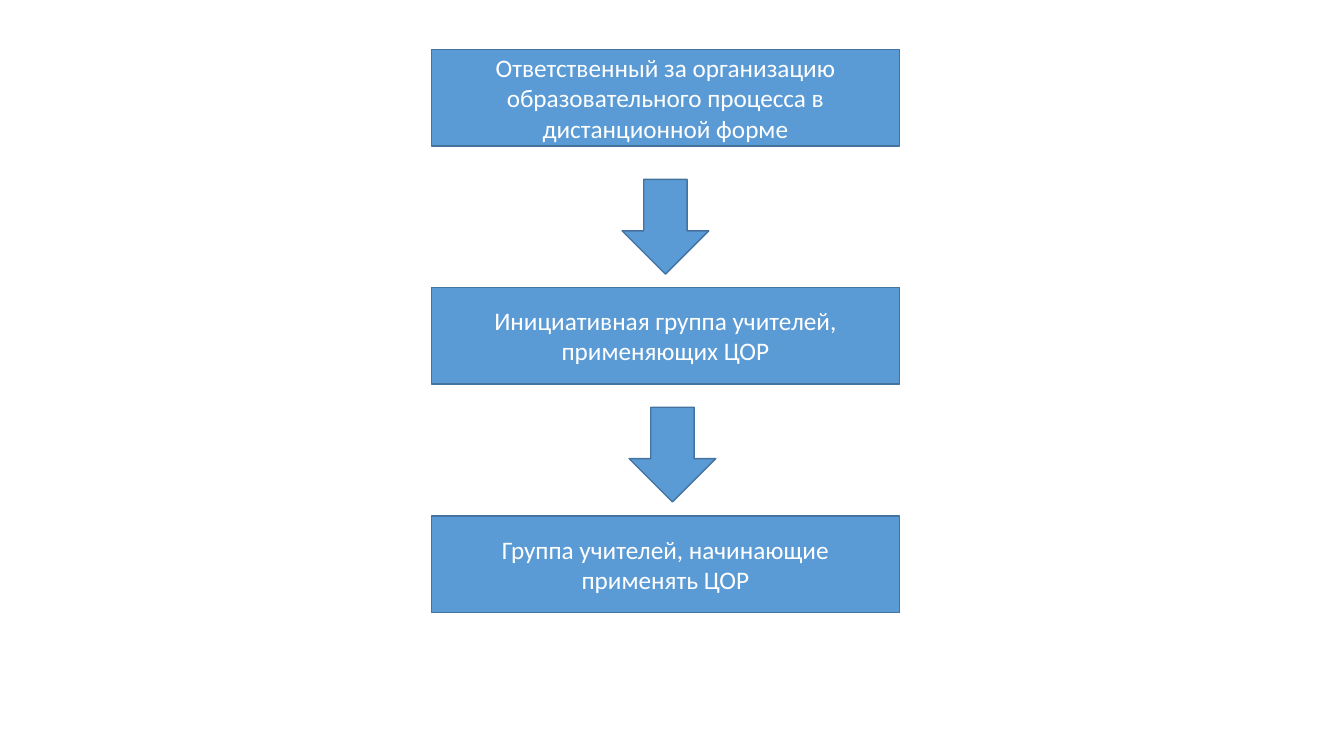
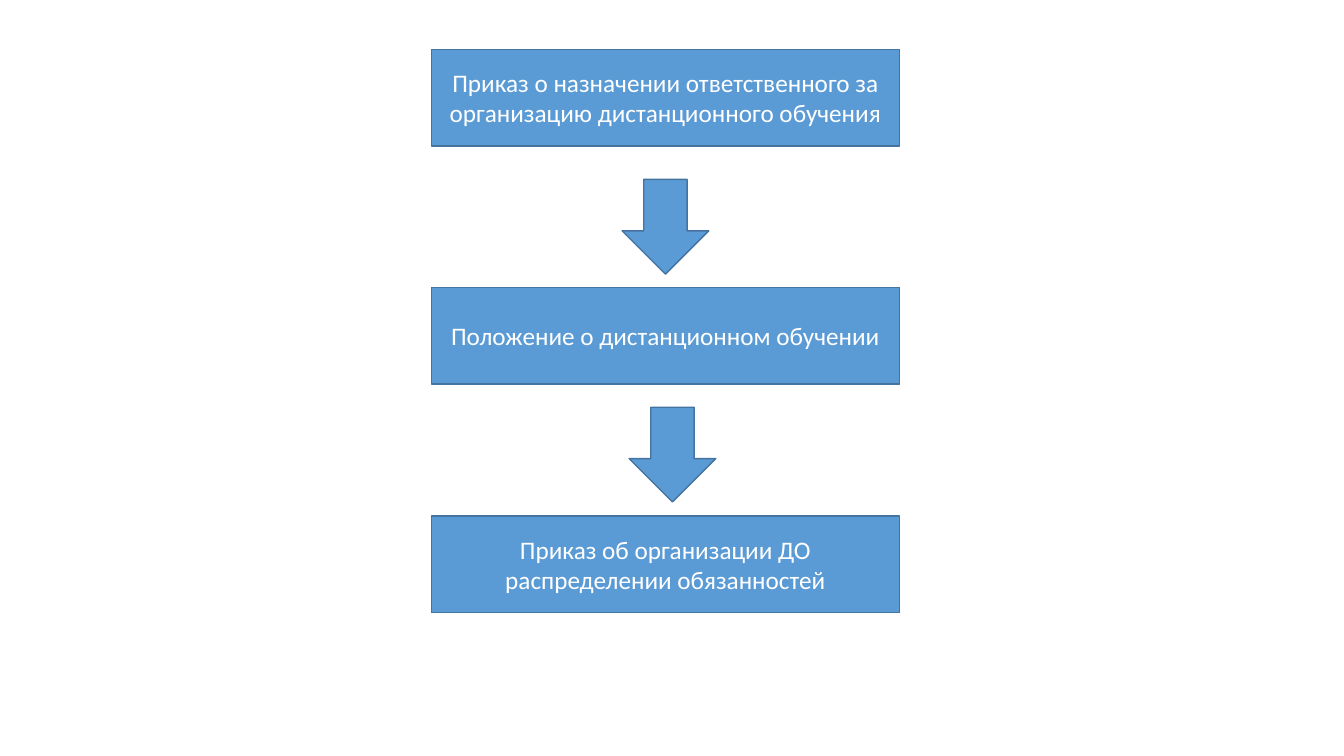
import dataclasses

import pptx
import pptx.dml.color
import pptx.enum.shapes
import pptx.enum.text
import pptx.presentation
import pptx.shapes.autoshape
import pptx.slide
import pptx.util

Inches = pptx.util.Inches
ShapeKind = pptx.enum.shapes.MSO_SHAPE

COLORS = {"fill": "5B9BD5", "outline": "43739E", "text": "FFFFFF"}
FONT_FORMAT = {"name": "Calibri", "size": pptx.util.Pt(18)}
FRAME_FORMAT = {
    "word_wrap": True,
    "vertical_anchor": pptx.enum.text.MSO_ANCHOR.MIDDLE,
}


@dataclasses.dataclass(frozen=True)
class Block:
    kind: ShapeKind
    left: float
    top: float
    width: float
    height: float


def step_block(top: float) -> Block:
    return Block(ShapeKind.RECTANGLE, 4.28, top, 4.64, 0.96)


def arrow_block(left: float, top: float) -> Block:
    return Block(ShapeKind.DOWN_ARROW, left, top, 0.86, 0.94)


STEPS = [step_block(top) for top in (0.49, 2.85, 5.12)]
ARROWS = [arrow_block(6.17, 1.78), arrow_block(6.24, 4.04)]

FLOWS = [
    (
        "Ответственный за организацию образовательного процесса в дистанционной форме",
        "Инициативная группа учителей, применяющих ЦОР",
        "Группа учителей, начинающие применять ЦОР",
    ),
    (
        "Приказ о назначении ответственного за организацию дистанционного обучения",
        "Положение о дистанционном обучении",
        "Приказ об организации ДО распределении обязанностей",
    ),
]


def color(role: str) -> pptx.dml.color.RGBColor:
    return pptx.dml.color.RGBColor.from_string(COLORS[role])


def apply_format(target: object, values: dict[str, object]) -> None:
    for attribute, value in values.items():
        setattr(target, attribute, value)


def draw_block(slide: pptx.slide.Slide, block: Block) -> pptx.shapes.autoshape.Shape:
    shape = slide.shapes.add_shape(
        block.kind,
        Inches(block.left),
        Inches(block.top),
        Inches(block.width),
        Inches(block.height),
    )
    shape.shadow.inherit = False
    shape.fill.solid()
    shape.fill.fore_color.rgb = color("fill")
    shape.line.color.rgb = color("outline")
    shape.line.width = pptx.util.Pt(1)
    return shape


def draw_step(slide: pptx.slide.Slide, block: Block, wording: str) -> None:
    frame = draw_block(slide, block).text_frame
    apply_format(frame, FRAME_FORMAT)
    paragraph = frame.paragraphs[0]
    paragraph.alignment = pptx.enum.text.PP_ALIGN.CENTER
    run = paragraph.add_run()
    run.text = wording
    apply_format(run.font, FONT_FORMAT)
    run.font.color.rgb = color("text")


def draw_flow(deck: pptx.presentation.Presentation, wordings: tuple[str, ...]) -> None:
    slide = deck.slides.add_slide(deck.slide_layouts.get_by_name("Blank"))
    for block, wording in zip(STEPS, wordings):
        draw_step(slide, block, wording)
    for arrow in ARROWS:
        draw_block(slide, arrow)


def main() -> None:
    deck = pptx.Presentation()
    deck.slide_width = Inches(13.33)
    deck.slide_height = Inches(7.5)
    for wordings in FLOWS:
        draw_flow(deck, wordings)
    deck.save("out.pptx")


if __name__ == "__main__":
    main()
